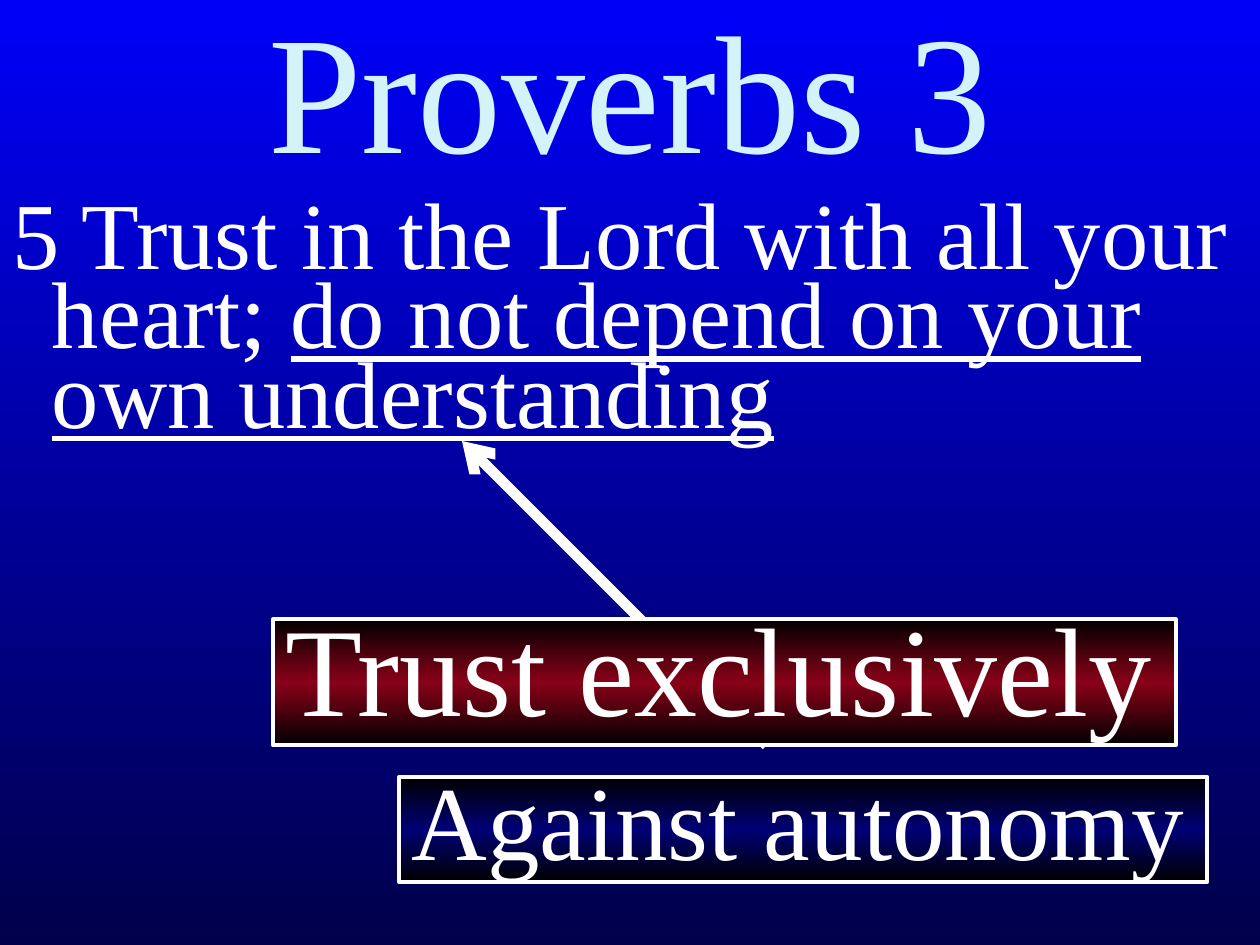
from copy import deepcopy

from lxml import etree
from pptx import Presentation
from pptx import util as u
from pptx.dml.color import RGBColor
from pptx.enum import shapes, text
from pptx.oxml.ns import qn

WHITE = RGBColor(0xFF, 0xFF, 0xFF)
BLACK = RGBColor(0x00, 0x00, 0x00)
PALE_CYAN = RGBColor(0xD3, 0xF3, 0xF9)
BRIGHT_BLUE = RGBColor(0x00, 0x00, 0xF8)
DARK_BLUE = RGBColor(0x00, 0x00, 0x4A)
NAVY = RGBColor(0x00, 0x00, 0x76)
CRIMSON = RGBColor(0x89, 0x01, 0x18)


class VerseSlide:
    font_name = "Times New Roman"

    def __init__(self, presentation):
        self.slide = presentation.slides.add_slide(presentation.slide_layouts[1])

    def gradient(self, fill, *colors):
        """Fill from top to bottom with evenly spaced colours."""
        fill.gradient()
        fill.gradient_angle = 270
        stops = fill.gradient_stops
        stop_list = fill._fill._gradFill.find(qn("a:gsLst"))
        for _ in range(len(colors) - len(stops)):
            stop_list.append(deepcopy(stop_list[-1]))
        for index, (stop, color) in enumerate(zip(fill.gradient_stops, colors)):
            stop.color.rgb = color
            stop.position = index / (len(colors) - 1)

    def background(self, *colors):
        self.gradient(self.slide.background.fill, *colors)

    def place(self, shape, left, top, width, height):
        shape.left, shape.top = u.Pt(left), u.Pt(top)
        shape.width, shape.height = u.Pt(width), u.Pt(height)

    def format_text(self, shape, size, spacing, color=WHITE,
                    align=text.PP_ALIGN.LEFT, anchor=text.MSO_ANCHOR.TOP):
        frame = shape.text_frame
        frame.auto_size = text.MSO_AUTO_SIZE.NONE
        frame.vertical_anchor = anchor
        paragraph = frame.paragraphs[0]
        paragraph.alignment = align
        paragraph.line_spacing = spacing
        paragraph.space_before = u.Pt(0)
        for run in paragraph.runs:
            run.font.name = self.font_name
            run.font.size = u.Pt(size)
            run.font.color.rgb = color

    def title(self, words, box, size, spacing):
        shape = self.slide.shapes.title
        self.place(shape, *box)
        shape.text_frame.text = words
        self.format_text(shape, size, spacing, PALE_CYAN,
                         text.PP_ALIGN.CENTER, text.MSO_ANCHOR.MIDDLE)

    def verse(self, plain, underlined, box, size, spacing, indent):
        shape = self.slide.placeholders[1]
        self.place(shape, *box)
        paragraph = shape.text_frame.paragraphs[0]
        paragraph.add_run().text = plain
        stressed = paragraph.add_run()
        stressed.text = underlined
        stressed.font.underline = True
        self.format_text(shape, size, spacing)
        properties = paragraph._p.get_or_add_pPr()
        properties.set("marL", str(u.Pt(indent)))
        properties.set("indent", str(-u.Pt(indent)))
        etree.SubElement(properties, qn("a:buNone"))

    def arrow(self, start, end, width):
        points = [u.Pt(value) for value in (*start, *end)]
        connector = self.slide.shapes.add_connector(
            shapes.MSO_CONNECTOR.STRAIGHT, *points)
        connector.line.color.rgb = WHITE
        connector.line.width = u.Pt(width)
        line = connector.line._get_or_add_ln()
        etree.SubElement(line, qn("a:tailEnd"), type="arrow")
        etree.SubElement(connector._element.spPr, qn("a:effectLst"))

    def label(self, words, box, size, spacing, middle_color):
        shape = self.slide.shapes.add_shape(
            shapes.MSO_SHAPE.RECTANGLE, *[u.Pt(value) for value in box])
        shape.shadow.inherit = False
        self.gradient(shape.fill, BLACK, middle_color, BLACK)
        shape.line.color.rgb = WHITE
        shape.line.width = u.Pt(2.25)
        shape.text_frame.text = words
        shape.text_frame.word_wrap = False
        self.format_text(shape, size, spacing)


def main():
    presentation = Presentation()
    presentation.slide_width, presentation.slide_height = u.Pt(720), u.Pt(540)
    page = VerseSlide(presentation)
    page.background(BRIGHT_BLUE, DARK_BLUE)
    page.title("Proverbs 3", (0, 0, 720, 120), 96, 0.8)
    page.verse("5 Trust in the Lord with all your heart; ",
               "do not depend on your own understanding",
               (0, 114, 720, 384), 54, 0.7, 22.5)
    page.arrow((438, 426), (264, 252), 6)
    page.label("Trust exclusively", (156, 354, 516, 72), 72, 0.75, CRIMSON)
    page.label("Against autonomy", (228, 444, 462, 60), 60, 0.77, NAVY)
    presentation.save("out.pptx")


if __name__ == "__main__":
    main()
